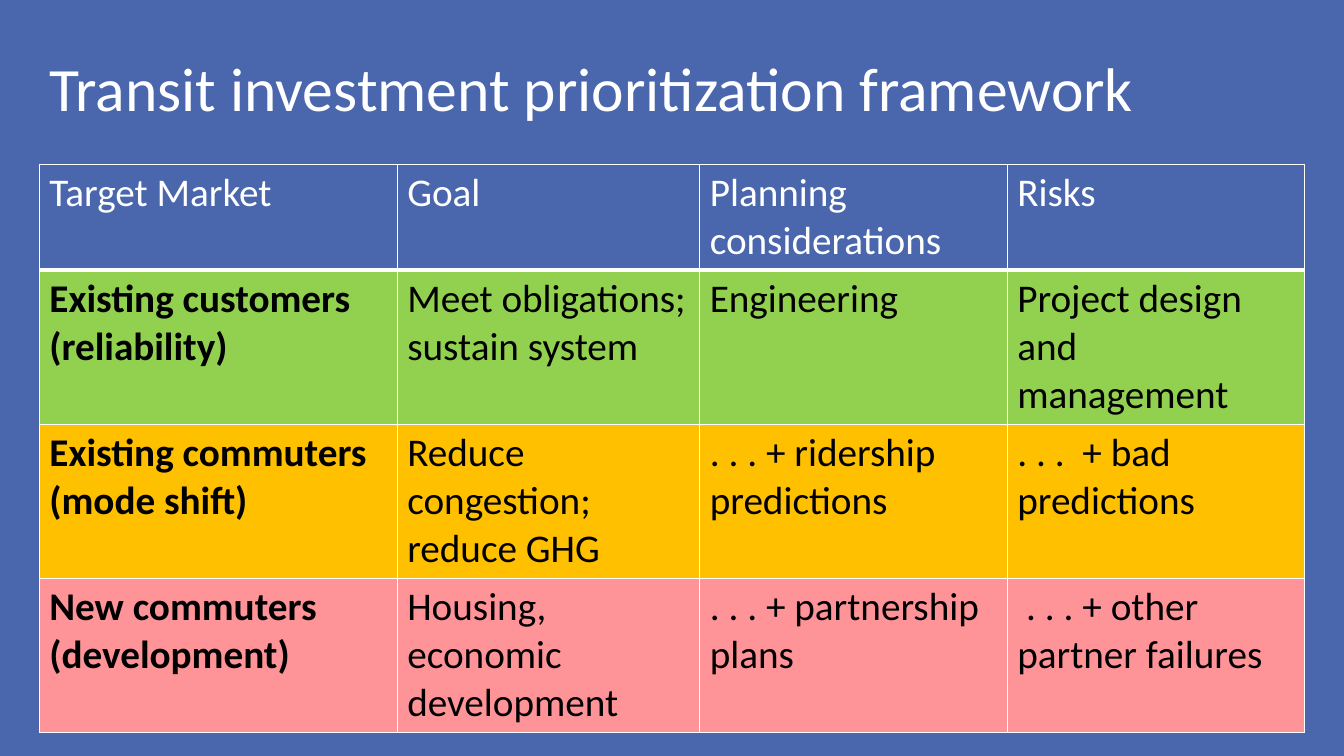
from dataclasses import dataclass

from lxml import etree
from pptx import Presentation
from pptx import util as u
from pptx.dml.color import RGBColor
from pptx.enum import text
from pptx.oxml import ns

WIDE, HIGH = u.Inches(13.33), u.Inches(7.5)
BLUE = RGBColor(0x4A, 0x66, 0xAC)
GREEN = RGBColor(0x92, 0xD0, 0x50)
AMBER = RGBColor(0xFF, 0xC0, 0x00)
PINK = RGBColor(0xFF, 0x94, 0x98)
WHITE = RGBColor(0xFF, 0xFF, 0xFF)
BLACK = RGBColor(0x00, 0x00, 0x00)
FONT = "Calibri"
LEFT = u.Inches(0.39)
TOP = u.Inches(1.63)
COLS = (3.55, 3, 3.05, 2.95)
THIN, THICK = 1, 3


@dataclass(frozen=True)
class Band:
    """One table row; "\\n" parts paragraphs and "\\v" breaks a line."""
    cells: tuple[str, str, str, str]
    fill: RGBColor
    ink: RGBColor = BLACK
    high: float = 1.53
    head: bool = False


BANDS = (
    Band(("Target Market", "Goal", "Planning considerations", "Risks"),
         BLUE, WHITE, 1.05, True),
    Band(("Existing customers\v(reliability)",
          "Meet obligations; sustain system",
          "Engineering",
          "Project design and management"), GREEN),
    Band(("Existing commuters\n(mode shift)",
          "Reduce congestion; reduce GHG",
          ". . . + ridership predictions",
          ". . .  + bad predictions"), AMBER),
    Band(("New commuters\n(development)",
          "Housing, economic development",
          ". . . + partnership plans",
          " . . . + other partner failures"), PINK),
)


def write(frame, words: str, size: int, ink: RGBColor, bold: bool = False) -> None:
    for i, part in enumerate(words.split("\n")):
        para = frame.add_paragraph() if i else frame.paragraphs[0]
        for j, line in enumerate(part.split("\v")):
            if j:
                para.add_line_break()
            run = para.add_run()
            run.text = line
            run.font.name = FONT
            run.font.size = u.Pt(size)
            run.font.bold = bold
            run.font.color.rgb = ink


def edge(cell, side: str, width: int, slot: int) -> None:
    """Draw one white cell border, placed ahead of the fill."""
    line = etree.Element(ns.qn(f"a:ln{side}"), w=str(u.Pt(width)))
    fill = etree.SubElement(line, ns.qn("a:solidFill"))
    etree.SubElement(fill, ns.qn("a:srgbClr"), val=str(WHITE))
    cell._tc.get_or_add_tcPr().insert(slot, line)


def add_title(slide) -> None:
    box = slide.shapes.add_textbox(LEFT, u.Inches(0.18), u.Inches(11.5), u.Inches(1.45))
    frame = box.text_frame
    frame.word_wrap = True
    frame.vertical_anchor = text.MSO_ANCHOR.MIDDLE
    frame.paragraphs[0].line_spacing = 0.9
    write(frame, "Transit investment prioritization framework", 44, WHITE)


def add_grid(slide) -> None:
    wide = u.Inches(sum(COLS))
    high = u.Inches(sum(band.high for band in BANDS))
    grid = slide.shapes.add_table(len(BANDS), len(COLS), LEFT, TOP, wide, high).table
    for col, share in zip(grid.columns, COLS):
        col.width = u.Inches(share)
    for r, band in enumerate(BANDS):
        grid.rows[r].height = u.Inches(band.high)
        over = THICK if r and BANDS[r - 1].head else THIN
        under = THICK if band.head else THIN
        sides = (("L", THIN), ("R", THIN), ("T", over), ("B", under))
        for c, words in enumerate(band.cells):
            cell = grid.cell(r, c)
            cell.fill.solid()
            cell.fill.fore_color.rgb = band.fill
            write(cell.text_frame, words, 28, band.ink, c == 0 and not band.head)
            for slot, (side, width) in enumerate(sides):
                edge(cell, side, width, slot)


def main() -> None:
    deck = Presentation()
    deck.slide_width, deck.slide_height = WIDE, HIGH
    slide = deck.slides.add_slide(deck.slide_layouts[6])
    slide.background.fill.solid()
    slide.background.fill.fore_color.rgb = BLUE
    add_title(slide)
    add_grid(slide)
    deck.save("out.pptx")


if __name__ == "__main__":
    main()
